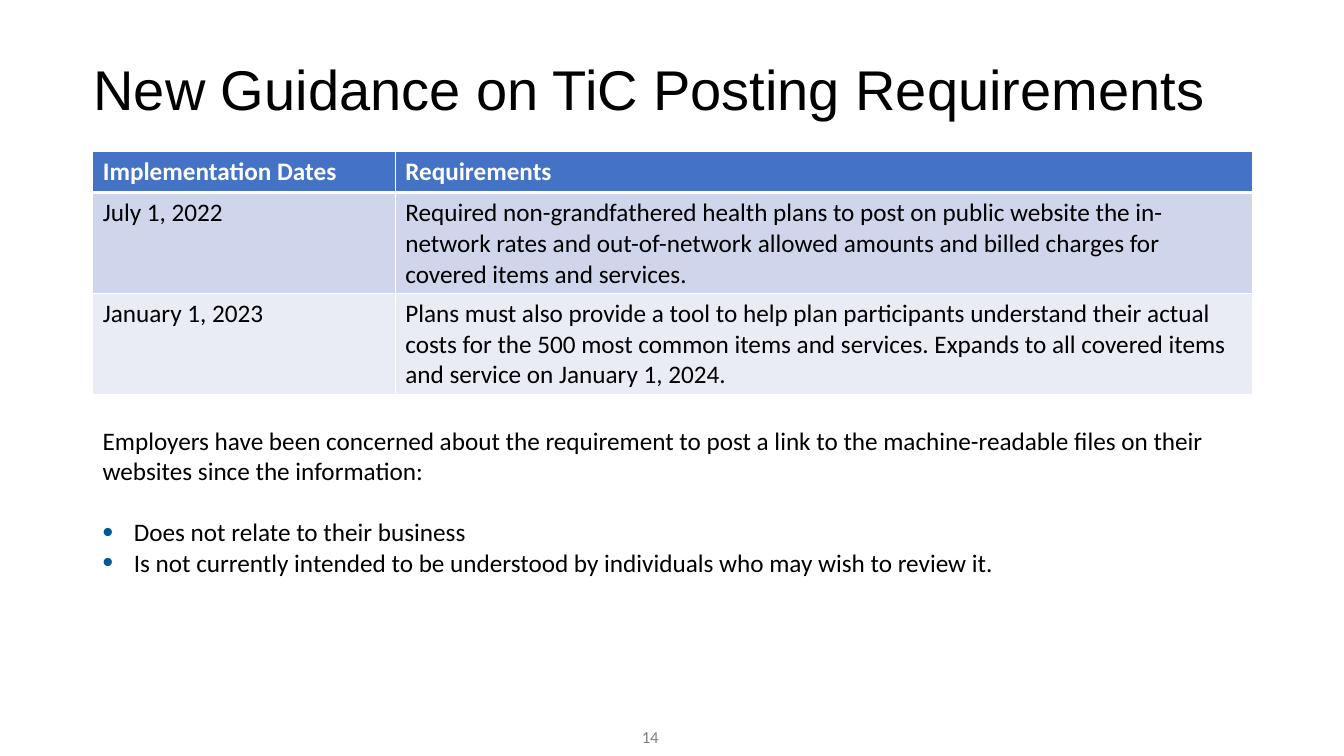
from dataclasses import dataclass

from lxml import etree
from pptx import Presentation
from pptx.dml.color import RGBColor
from pptx.enum.text import MSO_ANCHOR, PP_ALIGN
from pptx.oxml.ns import qn
from pptx.util import Inches, Pt

TOP, MIDDLE = MSO_ANCHOR.TOP, MSO_ANCHOR.MIDDLE
LEFT, RIGHT = PP_ALIGN.LEFT, PP_ALIGN.RIGHT


@dataclass(frozen=True)
class Theme:
    heading_font: str = "Arial"
    body_font: str = "Calibri"
    title_size: float = 40
    body_size: float = 18
    number_size: float = 12
    black: str = "000000"
    white: str = "FFFFFF"
    gray: str = "808080"
    bullet: str = "005892"
    header: str = "4472C4"
    bands: tuple[str, str] = ("CFD5EA", "E9EBF5")


@dataclass(frozen=True)
class Box:
    x: float
    y: float
    w: float
    h: float

    def lengths(self) -> tuple:
        return tuple(Inches(v) for v in (self.x, self.y, self.w, self.h))


@dataclass(frozen=True)
class Milestone:
    date: str
    requirement: str


THEME = Theme()
COLUMNS = (3, 8.5)
ROWS = (0.41, 1, 1)
MILESTONES = (
    Milestone("July 1, 2022",
              "Required non-grandfathered health plans to post on public website "
              "the in-network rates and out-of-network allowed amounts and billed "
              "charges for covered items and services."),
    Milestone("January 1, 2023",
              "Plans must also provide a tool to help plan participants understand "
              "their actual costs for the 500 most common items and services. "
              "Expands to all covered items and service on January 1, 2024."),
)
CONCERN = ("Employers have been concerned about the requirement to post a link to "
           "the machine-readable files on their websites since the information:")
REASONS = (
    "Does not relate to their business",
    "Is not currently intended to be understood by individuals who may wish "
    "to review it.",
)


def write(p, text: str, *, font: str = THEME.body_font,
          size: float = THEME.body_size, color: str = THEME.black,
          bold: bool = False, align=LEFT, line: float = 1.0,
          before: float = 0) -> None:
    p.alignment = align
    p.line_spacing = line
    p.space_before = Pt(before)
    r = p.add_run()
    r.text = text
    r.font.name = font
    r.font.size = Pt(size)
    r.font.bold = bold
    r.font.color.rgb = RGBColor.from_string(color)


def add_box(s, box: Box, anchor=TOP):
    tf = s.shapes.add_textbox(*box.lengths()).text_frame
    tf.word_wrap = True
    tf.vertical_anchor = anchor
    return tf


def add_bullet(p, indent: float = 0.31) -> None:
    pPr = p._p.get_or_add_pPr()
    pPr.set("marL", str(Inches(indent)))
    pPr.set("indent", str(-Inches(indent)))
    color = etree.SubElement(pPr, qn("a:buClr"))
    etree.SubElement(color, qn("a:srgbClr"), val=THEME.bullet)
    etree.SubElement(pPr, qn("a:buSzPct"), val="120000")
    etree.SubElement(pPr, qn("a:buFont"), typeface="Arial")
    etree.SubElement(pPr, qn("a:buChar"), char="•")


def add_borders(cell, top: float, bottom: float) -> None:
    tcPr = cell._tc.get_or_add_tcPr()
    for side, width in (("L", 1), ("R", 1), ("T", top), ("B", bottom)):
        ln = etree.SubElement(tcPr, qn(f"a:ln{side}"), w=str(Pt(width)))
        fill = etree.SubElement(ln, qn("a:solidFill"))
        etree.SubElement(fill, qn("a:srgbClr"), val=THEME.white)


def add_schedule(s, box: Box) -> None:
    table = s.shapes.add_table(len(ROWS), len(COLUMNS), *box.lengths()).table
    for column, width in zip(table.columns, COLUMNS):
        column.width = Inches(width)
    for row, height in zip(table.rows, ROWS):
        row.height = Inches(height)

    content = [("Implementation Dates", "Requirements")]
    content += [(m.date, m.requirement) for m in MILESTONES]
    for i, texts in enumerate(content):
        is_header = i == 0
        fill = THEME.header if is_header else THEME.bands[(i - 1) % 2]
        for j, text in enumerate(texts):
            cell = table.cell(i, j)
            add_borders(cell, top=3 if i == 1 else 1, bottom=3 if is_header else 1)
            cell.fill.solid()
            cell.fill.fore_color.rgb = RGBColor.from_string(fill)
            write(cell.text_frame.paragraphs[0], text, bold=is_header,
                  color=THEME.white if is_header else THEME.black)


def main() -> None:
    prs = Presentation()
    prs.slide_width, prs.slide_height = Inches(13.33), Inches(7.5)
    s = prs.slides.add_slide(prs.slide_layouts[6])

    # Title
    tf = add_box(s, Box(0.83, 0.19, 11.5, 1.45), MIDDLE)
    write(tf.paragraphs[0], "New Guidance on TiC Posting Requirements",
          font=THEME.heading_font, size=THEME.title_size, line=0.9)

    # Schedule of requirements
    add_schedule(s, Box(0.92, 1.5, sum(COLUMNS), sum(ROWS)))

    # Employer concerns
    tf = add_box(s, Box(0.92, 4.17, 11.83, 1.62))
    write(tf.paragraphs[0], CONCERN)
    for i, reason in enumerate(REASONS):
        p = tf.add_paragraph()
        add_bullet(p)
        write(p, reason, before=22 if i == 0 else 0)

    # Slide number
    tf = add_box(s, Box(3.67, 7.11, 3, 0.39), MIDDLE)
    write(tf.paragraphs[0], "14 ", size=THEME.number_size, color=THEME.gray,
          align=RIGHT)

    prs.save("out.pptx")


if __name__ == "__main__":
    main()
